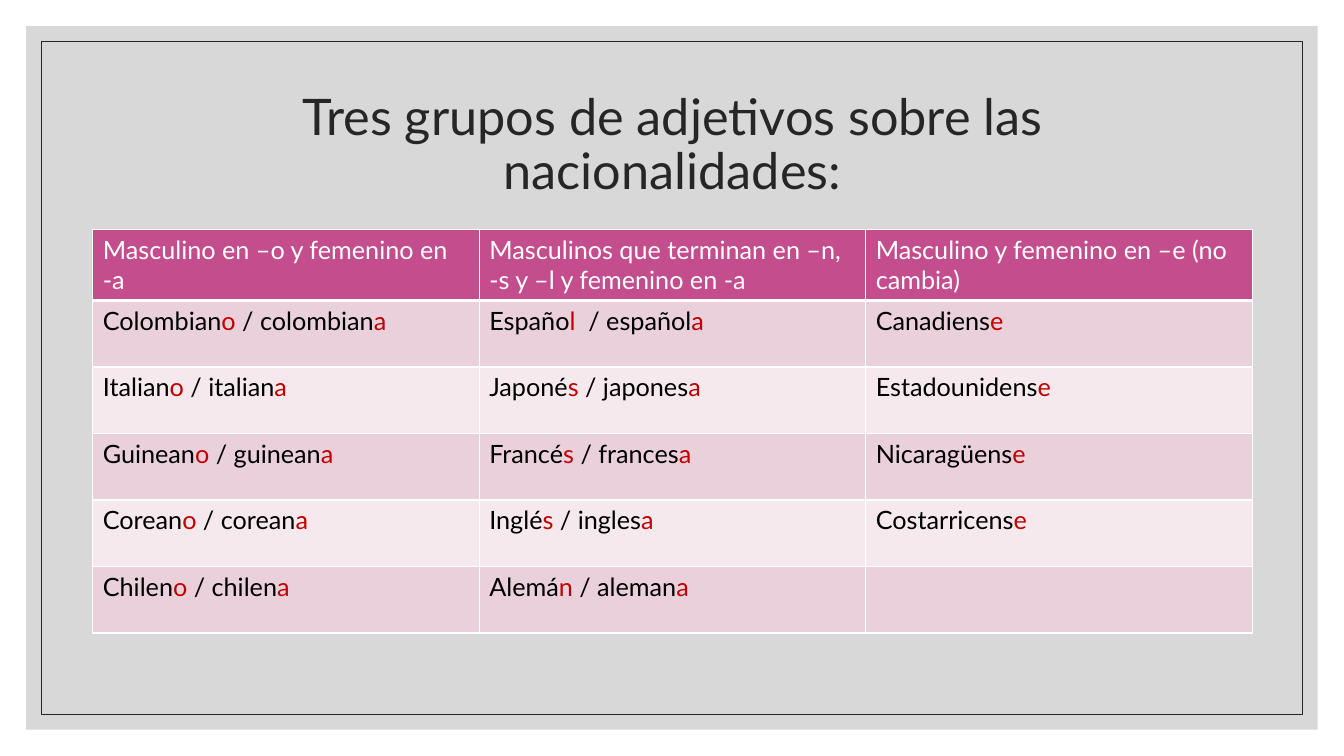
import pptx
import pptx.util
import pptx.dml.color
import pptx.enum.shapes
import pptx.enum.text
import pptx.oxml
import pptx.oxml.ns

Inches = pptx.util.Inches
Pt = pptx.util.Pt


def paint(color, tone):
    color.rgb = pptx.dml.color.RGBColor.from_string(tone)


def style(run, size, tone):
    run.font.name = "Lato"
    run.font.size = Pt(size)
    run.font.bold = False
    paint(run.font.color, tone)


deck = pptx.Presentation()
deck.slide_width = Inches(13.33)
deck.slide_height = Inches(7.5)
wide, high = deck.slide_width, deck.slide_height
slide = deck.slides.add_slide(deck.slide_layouts[6])
paint_back = slide.background.fill
paint_back.solid()
paint(paint_back.fore_color, "FFFFFF")

frames = []
for inset in (Inches(0.26), Inches(0.41)):
    frame = slide.shapes.add_shape(
        pptx.enum.shapes.MSO_SHAPE.RECTANGLE,
        inset, inset, wide - 2 * inset, high - 2 * inset)
    frame.shadow.inherit = False
    frames.append(frame)
panel, rim = frames

panel.line.fill.background()
panel.fill.solid()
paint(panel.fill.fore_color, "BFBFBF")
tint = panel.fill._xPr.find(".//" + pptx.oxml.ns.qn("a:srgbClr"))
tint.append(pptx.oxml.parse_xml(
    f'<a:alpha {pptx.oxml.ns.nsdecls("a")} val="60000"/>'))

rim.fill.background()
paint(rim.line.color, "262626")
rim.line.width = Pt(0.5)

title = slide.shapes.add_textbox(Inches(1.17), Inches(0.7), Inches(11), Inches(1.5))
text = title.text_frame
text.word_wrap = True
text.vertical_anchor = pptx.enum.text.MSO_ANCHOR.MIDDLE
text.text = "Tres grupos de adjetivos sobre las nacionalidades:"
line = text.paragraphs[0]
line.alignment = pptx.enum.text.PP_ALIGN.CENTER
line.line_spacing = 0.9
style(line.runs[0], 36, "262626")

rows = [
    ["Masculino en –o y femenino en -a",
     "Masculinos que terminan en –n, -s y –l y femenino en -a",
     "Masculino y femenino en –e (no cambia)"],
    ["Colombian*o* / colombian*a", "Españo*l*  / español*a", "Canadiens*e"],
    ["Italian*o* / italian*a", "Japoné*s* / japones*a", "Estadounidens*e"],
    ["Guinean*o* / guinean*a", "Francé*s* / frances*a", "Nicaragüens*e"],
    ["Corean*o* / corean*a", "Inglé*s* / ingles*a", "Costarricens*e"],
    ["Chilen*o* / chilen*a", "Alemá*n* / aleman*a", ""],
]
grid = slide.shapes.add_table(
    len(rows), 3, Inches(0.92), Inches(2.28), Inches(11.5), Inches(3.96)).table

for r, row in enumerate(rows):
    fill = "C34D8D" if r == 0 else ("F5E9EE", "E9D0DB")[r % 2]
    tones = ("FFFFFF",) if r == 0 else ("000000", "C00000")
    for c, words in enumerate(row):
        cell = grid.cell(r, c)
        for side in "LRTB":
            thick = Pt(3) if r == 0 and side == "B" else Pt(1)
            cell._tc.get_or_add_tcPr().append(pptx.oxml.parse_xml(
                f'<a:ln{side} {pptx.oxml.ns.nsdecls("a")} w="{thick}">'
                f'<a:solidFill><a:srgbClr val="FFFFFF"/></a:solidFill></a:ln{side}>'))
        cell.fill.solid()
        paint(cell.fill.fore_color, fill)
        line = cell.text_frame.paragraphs[0]
        line.font.size = Pt(18)
        for i, part in enumerate(words.split("*")):
            if part:
                run = line.add_run()
                run.text = part
                style(run, 18, tones[i % 2])

deck.save("out.pptx")
